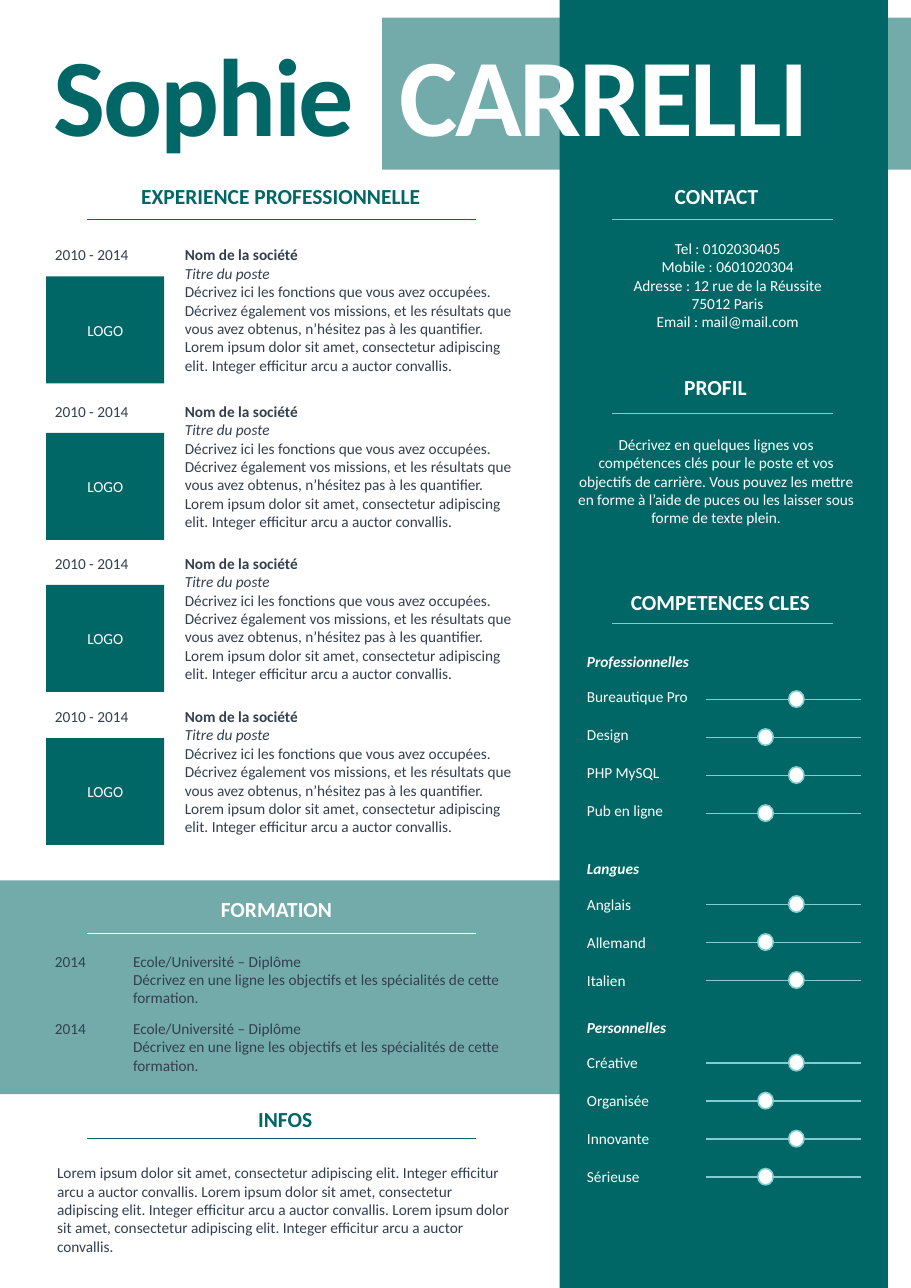
"""Build a one-page French CV with a teal sidebar and skill sliders."""
from lxml import etree
from pptx import Presentation
from pptx.dml.color import RGBColor
from pptx.enum.shapes import MSO_CONNECTOR, MSO_SHAPE
from pptx.enum.text import MSO_ANCHOR, MSO_AUTO_SIZE, PP_ALIGN
from pptx.oxml.ns import qn
from pptx.util import Inches, Pt

RECT, OVAL, STRAIGHT = MSO_SHAPE.RECTANGLE, MSO_SHAPE.OVAL, MSO_CONNECTOR.STRAIGHT
LEFT, CENTER, MIDDLE = PP_ALIGN.LEFT, PP_ALIGN.CENTER, MSO_ANCHOR.MIDDLE
GROW, FIXED = MSO_AUTO_SIZE.SHAPE_TO_FIT_TEXT, MSO_AUTO_SIZE.NONE
TEAL, WHITE, SLATE, AQUA = "006666", "FFFFFF", "333F50", "82CDD2"
rgb = RGBColor.from_string

prs = Presentation()
prs.slide_width, prs.slide_height = Inches(8.27), Inches(11.69)
shapes = prs.slides.add_slide(prs.slide_layouts[6]).shapes


def add_shape(kind, box, fill, alpha=None):
    """Add a filled shape without outline or shadow."""
    s = shapes.add_shape(kind, *map(Inches, box))
    s.shadow.inherit = False
    s.fill.solid()
    s.fill.fore_color.rgb = rgb(fill)
    s.line.fill.background()
    if alpha:
        color = s.fill._xPr.find(qn("a:solidFill"))[0]
        etree.SubElement(color, qn("a:alpha")).set("val", str(alpha * 1000))
    return s


def add_text(box, paragraphs, color, align=LEFT, wrap=True, s=None, **fmt):
    """Write paragraphs of (text, format) runs into a shape or a new text box."""
    s = s or shapes.add_textbox(*map(Inches, box))
    tf = s.text_frame
    tf.word_wrap = wrap
    tf.auto_size = GROW
    for i, runs in enumerate(paragraphs):
        p = tf.add_paragraph() if i else tf.paragraphs[0]
        p.alignment = align
        for text, extra in [(runs, {})] if isinstance(runs, str) else runs:
            r = p.add_run()
            r.text = text
            r.font.color.rgb = rgb(extra.get("color", color))
            style = {"name": "Calibri", "size": Pt(10), **fmt, **extra}
            style.pop("color", None)
            for name, value in style.items():
                setattr(r.font, name, value)
    return tf


add_shape(RECT, (0, 7.99, 5.22, 1.94), TEAL, 55)
add_shape(RECT, (3.47, 0.16, 4.8, 1.38), TEAL, 55)
add_shape(RECT, (5.08, 0, 2.98, 11.69), TEAL)

name_runs = [("Sophie", {}), (" ", {}), ("CARRELLI", {"color": WHITE})]
name = add_text((0.39, 0.19, 7.08, 1.31), [name_runs], TEAL, wrap=False, size=Pt(72), bold=True)
for r, spacing in zip(name.paragraphs[0].runs, (-150, 1330, -150)):
    r._r.get_or_add_rPr().set("spc", str(spacing))

headings = [
    ("EXPERIENCE PROFESSIONNELLE", 1.17, 1.61, 2.76, TEAL),
    ("FORMATION", 1.9, 8.08, 1.22, WHITE),
    ("INFOS", 2.24, 9.99, 0.7, TEAL),
    ("CONTACT", 6.02, 1.61, 0.97, WHITE),
    ("PROFIL", 6.11, 3.35, 0.77, WHITE),
    ("COMPETENCES CLES", 5.62, 5.3, 1.84, WHITE),
]
for title, x, y, w, color in headings:
    add_text((x, y, w, 0.34), [title], color, CENTER, wrap=False, size=Pt(14), bold=True)

lorem = "Lorem ipsum dolor sit amet, consectetur adipiscing elit. Integer efficitur arcu a auctor convallis."
missions = (
    "Décrivez ici les fonctions que vous avez occupées. Décrivez également vos missions, "
    "et les résultats que vous avez obtenus, n’hésitez pas à les quantifier. " + lorem
)
job = [[("Nom de la société", {"bold": True})], [("Titre du poste", {"italic": True})], missions]
for y in (2.18, 3.6, 4.98, 6.37):
    add_text((0.4, y, 1.3, 0.27), ["2010 - 2014"], SLATE)
    add_text((1.58, y, 3.2, 1.28), job, SLATE)
    logo = add_shape(RECT, (0.42, y + 0.33, 1.07, 0.97), TEAL)
    tf = add_text(None, ["LOGO"], WHITE, CENTER, s=logo)
    tf.auto_size, tf.vertical_anchor = FIXED, MIDDLE
    tf.margin_left = tf.margin_right = tf.margin_top = tf.margin_bottom = 0

school = [
    "Ecole/Université – Diplôme",
    "Décrivez en une ligne les objectifs et les spécialités de cette formation.",
]
for y in (8.59, 9.2):
    add_text((0.4, y, 0.71, 0.27), ["2014"], SLATE)
    add_text((1.11, y, 3.83, 0.61), school, SLATE)

add_text((0.42, 10.51, 4.36, 1.28), [" ".join([lorem] * 3)], SLATE)

contact = [
    "Tel : 0102030405",
    "Mobile : 0601020304",
    "Adresse : 12 rue de la Réussite",
    "75012 Paris",
    "Email : mail@mail.com",
]
add_text((5.23, 2.12, 2.75, 0.94), contact, WHITE, CENTER)
profile = (
    "Décrivez en quelques lignes vos compétences clés pour le poste et vos objectifs de carrière. "
    "Vous pouvez les mettre en forme à l’aide de puces ou les laisser sous forme de texte plein."
)
add_text((5.14, 3.9, 2.72, 0.94), [profile], WHITE, CENTER)

lines = [(0.79, 4.32, y, color, 0.5) for y, color in ((1.99, TEAL), (8.47, WHITE), (10.33, TEAL))]
lines += [(5.56, 7.56, y, AQUA, 0.5) for y in (1.99, 3.75, 5.66)]
skill_groups = [
    ("Professionnelles", 5.87, 6.19, 6.35, ["Bureautique Pro", "Design", "PHP MySQL", "Pub en ligne"]),
    ("Langues", 7.75, 8.08, 8.21, ["Anglais", "Allemand", "Italien"]),
    ("Personnelles", 9.19, 9.51, 9.65, ["Créative", "Organisée", "Innovante", "Sérieuse"]),
]
row_gap = 0.69 / 2
knobs = []
for group, group_y, label_y, slider_y, skills in skill_groups:
    add_text((5.23, group_y, 2.75, 0.27), [group], WHITE, bold=True, italic=True)
    for i, skill in enumerate(skills):
        y = slider_y + i * row_gap
        add_text((5.23, label_y + i * row_gap, 1.35, 0.27), [skill], WHITE)
        lines.append((6.41, 7.82, y, AQUA, 1))
        knobs.append((6.88 if i % 2 else 7.16, y - 0.08, 0.14, 0.15))

for x1, x2, y, color, width in lines:
    line = shapes.add_connector(STRAIGHT, *map(Inches, (x1, y, x2, y)))
    line.line.color.rgb = rgb(color)
    line.line.width = Pt(width)
    etree.SubElement(line._element.spPr, qn("a:effectLst"))

for box in knobs:
    knob = add_shape(OVAL, box, WHITE)
    knob.line.color.rgb = rgb(AQUA)
    knob.line.width = Pt(1)

prs.save("out.pptx")
